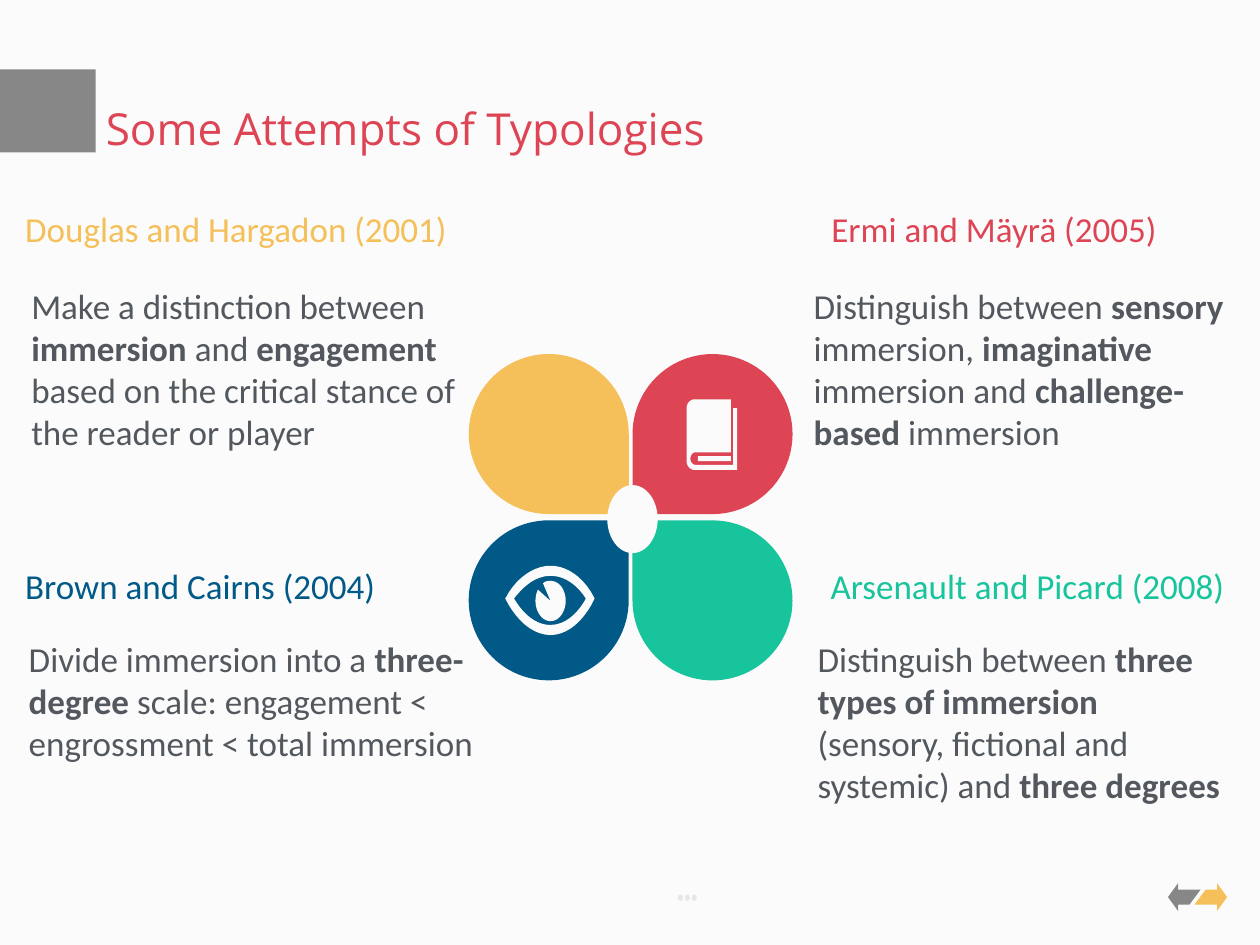
from pptx import Presentation
from pptx.dml.color import RGBColor
from pptx.enum.shapes import MSO_SHAPE
from pptx.enum.text import MSO_ANCHOR, PP_ALIGN
from pptx.util import Inches, Pt

BACKGROUND = RGBColor(0xFB, 0xFB, 0xFB)
GREY = RGBColor(0x87, 0x87, 0x87)
PALE = RGBColor(0xE7, 0xE7, 0xE7)
INK = RGBColor(0x53, 0x58, 0x5F)
YELLOW = RGBColor(0xF5, 0xBF, 0x5A)
RED = RGBColor(0xDD, 0x45, 0x55)
BLUE = RGBColor(0x00, 0x59, 0x87)
GREEN = RGBColor(0x17, 0xC4, 0x9B)

HEADING_ROWS = (1.61, 4.44)
BODY_ROWS = (2.16, 4.96)
PETAL_COLUMNS = (3.72, 5.02)
PETAL_ROWS = (2.81, 4.13)
PETAL_SIZE = 1.27

# Column, row, colour, petal rotation
QUADRANTS = (
    (0, 0, YELLOW, 90),
    (1, 0, RED, 180),
    (0, 1, BLUE, 0),
    (1, 1, GREEN, 270),
)
# Heading, its left and width, its alignment, body left and width, body runs
# (every second run is bold)
TYPOLOGIES = (
    ("Douglas and Hargadon (2001)", 0.16, 3.85, PP_ALIGN.LEFT, 0.15, 3.57,
     ("Make a distinction between ", "immersion ", "and ", "engagement",
      " based on the critical stance of the reader or player")),
    ("Ermi and Mäyrä (2005)", 6.36, 3.06, PP_ALIGN.CENTER, 6.36, 3.5,
     ("Distinguish between ", "sensory ", "immersion, ", "imaginative",
      " immersion and ", "challenge-based ", "immersion")),
    ("Brown and Cairns (2004)", 0.16, 3.19, PP_ALIGN.LEFT, 0.13, 3.87,
     ("Divide immersion into a ", "three-degree",
      " scale: engagement < engrossment < total immersion")),
    ("Arsenault and Picard (2008)", 6.39, 3.53, PP_ALIGN.CENTER, 6.39, 3.47,
     ("Distinguish between ", "three types of immersion",
      " (sensory, fictional and systemic) and ", "three degrees")),
)

# Contours: two numbers are a corner, six are a curve (two controls and an end)
ARROW = [(9.66, 7.06), (9.66, 7.01), (9.74, 7.12), (9.66, 7.23),
         (9.66, 7.18), (9.48, 7.18), (9.57, 7.06)]
ARROWS_CENTRE = (9.505, 7.12)
EYE = (
    [(4.37, 5.04), (4.22, 5.04, 4.09, 4.91, 4.01, 4.75),
     (4.1, 4.58, 4.24, 4.49, 4.37, 4.49), (4.49, 4.49, 4.63, 4.57, 4.72, 4.75),
     (4.64, 4.92, 4.51, 5.04, 4.37, 5.04)],
    [(4.08, 4.75), (4.15, 4.87, 4.25, 4.96, 4.37, 4.96),
     (4.52, 4.96, 4.62, 4.81, 4.65, 4.75), (4.58, 4.64, 4.48, 4.57, 4.37, 4.57),
     (4.22, 4.57, 4.12, 4.7, 4.08, 4.75)],
    [(4.37, 4.77), (4.27, 4.68), (4.26, 4.7, 4.25, 4.73, 4.25, 4.77),
     (4.25, 4.85, 4.3, 4.93, 4.37, 4.93), (4.44, 4.93, 4.49, 4.85, 4.49, 4.77),
     (4.49, 4.68, 4.44, 4.61, 4.37, 4.61), (4.35, 4.61, 4.33, 4.61, 4.31, 4.63)],
)
BOOK = (
    [(5.82, 3.24), (5.82, 3.69), (5.52, 3.69),
     (5.5, 3.69, 5.48, 3.67, 5.48, 3.64), (5.48, 3.61, 5.5, 3.59, 5.52, 3.59),
     (5.8, 3.59), (5.8, 3.17), (5.51, 3.17),
     (5.48, 3.17, 5.45, 3.2, 5.45, 3.24), (5.45, 3.66),
     (5.45, 3.7, 5.48, 3.73, 5.51, 3.73), (5.85, 3.73), (5.85, 3.24)],
    [(5.54, 3.62), (5.8, 3.62), (5.8, 3.66), (5.54, 3.66)],
)


def paint(shape, colour):
    shape.shadow.inherit = False
    shape.fill.solid()
    shape.fill.fore_color.rgb = colour
    shape.line.fill.background()


def add_preset(slide, kind, box, colour, rotation=0):
    shape = slide.shapes.add_shape(kind, *map(Inches, box))
    shape.rotation = rotation
    paint(shape, colour)


def flatten(contour, steps=10):
    """Turn the curves of a contour into short straight segments."""
    points = []
    for segment in contour:
        if len(segment) == 2:
            points.append(segment)
            continue
        curve = (points[-1], segment[:2], segment[2:4], segment[4:])
        for step in range(1, steps + 1):
            t = step / steps
            weights = ((1 - t) ** 3, 3 * t * (1 - t) ** 2,
                       3 * t ** 2 * (1 - t), t ** 3)
            points.append(tuple(sum(w * p[axis] for w, p in zip(weights, curve))
                                for axis in (0, 1)))
    return points


def add_outline(slide, contours, colour):
    """Draw contours in EMU, as the builder rounds to whole units."""
    first, *others = [[(Inches(x), Inches(y)) for x, y in flatten(contour)]
                      for contour in contours]
    builder = slide.shapes.build_freeform(*first[0])
    builder.add_line_segments(first[1:], close=True)
    for points in others:
        builder.move_to(*points[0])
        builder.add_line_segments(points[1:], close=True)
    paint(builder.convert_to_shape(), colour)


def add_text(slide, box, runs, colour, size=20, font="Calibri", inset=0.04,
             align=PP_ALIGN.LEFT, anchor=MSO_ANCHOR.TOP):
    """Add one paragraph in which every second run is bold."""
    frame = slide.shapes.add_textbox(*map(Inches, box)).text_frame
    frame.word_wrap = True
    frame.vertical_anchor = anchor
    frame.margin_left = frame.margin_right = Inches(inset)
    frame.margin_top = frame.margin_bottom = Inches(inset)
    paragraph = frame.paragraphs[0]
    paragraph.alignment = align
    paragraph.font.name = font
    paragraph.font.size = Pt(size)
    paragraph.font.color.rgb = colour
    for index, text in enumerate(runs):
        run = paragraph.add_run()
        run.text = text
        if index % 2:
            run.font.bold = True
    return paragraph


def add_frame(slide):
    """Add the title with its marker and the footer ornaments."""
    add_preset(slide, MSO_SHAPE.RECTANGLE, (-0.01, 0.55, 0.77, 0.66), GREY)
    title = add_text(slide, (0.8, 0.5, 5.3, 0.77), ["Some Attempts of Typologies"],
                     RED, size=25.2, font="Open Sans", anchor=MSO_ANCHOR.BOTTOM)
    title.line_spacing = 0.9
    centre_x, centre_y = ARROWS_CENTRE
    add_outline(slide, [ARROW], YELLOW)
    add_outline(slide, [[(2 * centre_x - x, 2 * centre_y - y) for x, y in ARROW]],
                GREY)
    for dot in range(3):
        add_preset(slide, MSO_SHAPE.OVAL, (5.38 + dot * 0.055, 7.1, 0.04, 0.05),
                   PALE)


def add_flower(slide):
    for column, row, colour, rotation in QUADRANTS:
        box = (PETAL_COLUMNS[column], PETAL_ROWS[row], PETAL_SIZE, PETAL_SIZE)
        add_preset(slide, MSO_SHAPE.TEAR, box, colour, rotation)
    add_preset(slide, MSO_SHAPE.OVAL, (4.82, 3.85, 0.4, 0.54), BACKGROUND)
    add_outline(slide, EYE, BACKGROUND)
    add_outline(slide, BOOK, BACKGROUND)


def add_typologies(slide):
    for (_, row, colour, _), typology in zip(QUADRANTS, TYPOLOGIES):
        heading, left, width, align, body_left, body_width, body = typology
        add_text(slide, (left, HEADING_ROWS[row], width, 0.41), [heading], colour,
                 align=align)
        add_text(slide, (body_left, BODY_ROWS[row], body_width, 1.55), body, INK,
                 inset=0.1)


def main():
    presentation = Presentation()
    presentation.slide_width = Inches(10)
    presentation.slide_height = Inches(7.5)
    slide = presentation.slides.add_slide(presentation.slide_layouts[6])
    slide.background.fill.solid()
    slide.background.fill.fore_color.rgb = BACKGROUND
    add_frame(slide)
    add_flower(slide)
    add_typologies(slide)
    presentation.save("out.pptx")


if __name__ == "__main__":
    main()
